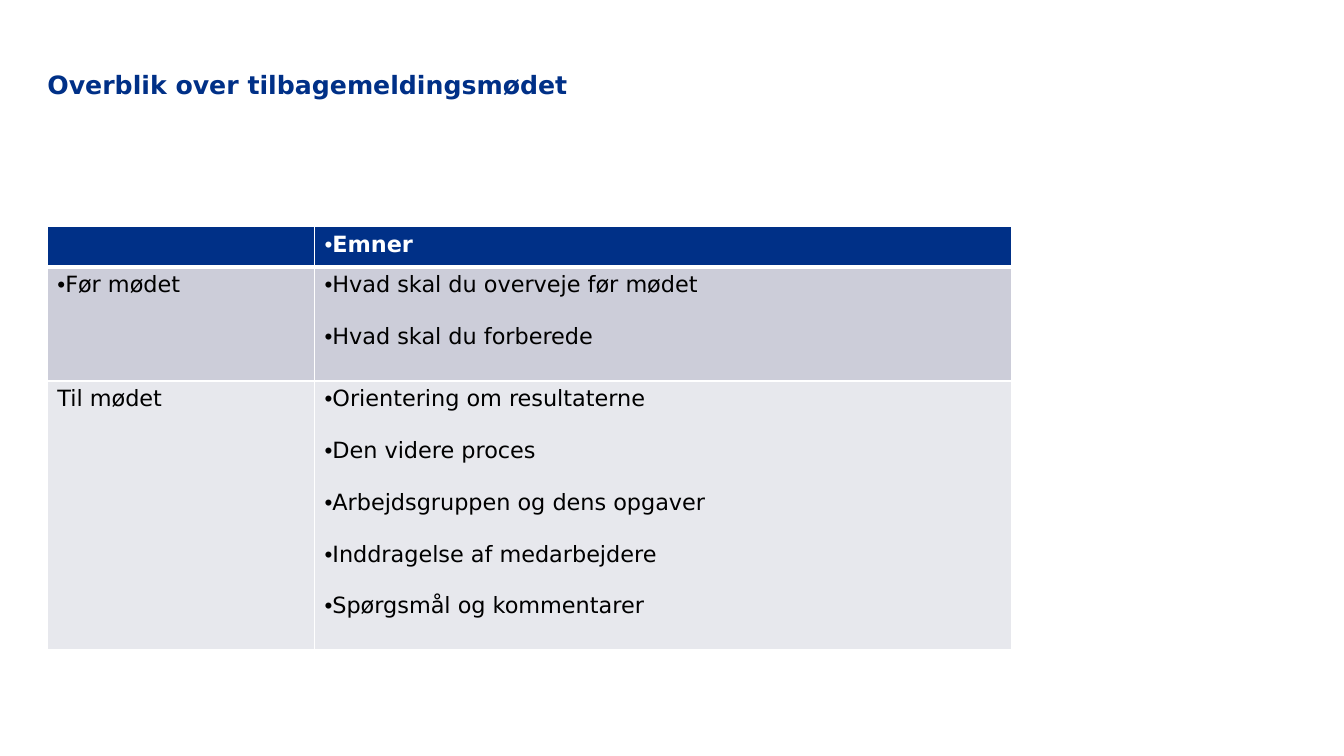
from lxml import etree
from pptx import Presentation
from pptx import util as u
from pptx.dml.color import RGBColor
from pptx.enum import text
from pptx.oxml import ns

NAVY, WHITE, BLACK = "003087", "FFFFFF", "000000"
ROWS = [
    (0.4, NAVY, [], ["Emner"]),
    (1.13, "CCCDD9", ["Før mødet"],
     ["Hvad skal du overveje før mødet", "Hvad skal du forberede"]),
    (2.66, "E7E8ED", ["Til mødet"],
     ["Orientering om resultaterne", "Den videre proces",
      "Arbejdsgruppen og dens opgaver", "Inddragelse af medarbejdere",
      "Spørgsmål og kommentarer"]),
]


def rgb(code):
    return RGBColor.from_string(code)


def add(parent, tag, **attrs):
    return etree.SubElement(parent, ns.qn(tag), attrs)


def write(frame, lines, size=16, color=BLACK, bold=False, bullet=False, gap=0):
    for i, line in enumerate(lines):
        para = frame.paragraphs[0] if i == 0 else frame.add_paragraph()
        if i < len(lines) - 1:
            para.space_after = u.Pt(gap)
        if bullet:
            props = para._p.get_or_add_pPr()
            props.set("marL", "0")
            props.set("indent", "0")
            add(props, "a:buFont", typeface="Arial")
            add(props, "a:buChar", char="•")
        run = para.add_run()
        run.text = line
        font = run.font
        font.name, font.size, font.bold = "DejaVu Sans", u.Pt(size), bold
        font.color.rgb = rgb(color)


class Deck:
    """Holds the presentation, its current slide and the slide's style."""

    def __init__(self):
        self.prs = Presentation()
        self.prs.slide_width = u.Inches(13.33)
        self.prs.slide_height = u.Inches(7.5)
        self.slide = self.prs.slides.add_slide(self.prs.slide_layouts[6])

    def title(self, line, *box):
        frame = self.slide.shapes.add_textbox(*map(u.Inches, box)).text_frame
        frame.word_wrap = True
        frame.margin_left = frame.margin_right = 0
        frame.margin_top = frame.margin_bottom = 0
        frame.vertical_anchor = text.MSO_ANCHOR.TOP
        write(frame, [line], size=18, color=NAVY, bold=True)
        frame.paragraphs[0].line_spacing = 1.04

    def edge(self, cell, side, width):
        line = add(cell._tc.get_or_add_tcPr(), f"a:ln{side}", w=str(u.Pt(width)))
        add(add(line, "a:solidFill"), "a:srgbClr", val=WHITE)

    def cell(self, cell, lines, fill, head, bullet):
        for side in "LRTB":
            thick = head and side == "B"
            self.edge(cell, side, 3 if thick else 1)
        cell.fill.solid()
        cell.fill.fore_color.rgb = rgb(fill)
        write(cell.text_frame, lines, color=WHITE if head else BLACK,
              bold=head, bullet=bullet, gap=18.5)

    def table(self, rows, left, top, widths):
        height = sum(row[0] for row in rows)
        box = map(u.Inches, (left, top, sum(widths), height))
        grid = self.slide.shapes.add_table(len(rows), len(widths), *box).table
        for col, width in zip(grid.columns, widths):
            col.width = u.Inches(width)
        for i, (tall, fill, *cells) in enumerate(rows):
            grid.rows[i].height = u.Inches(tall)
            for j, lines in enumerate(cells):
                bullet = lines != ["Til mødet"]
                self.cell(grid.cell(i, j), lines, fill, i == 0, bullet)

    def save(self):
        self.prs.save("out.pptx")


def main():
    deck = Deck()
    deck.title("Overblik over tilbagemeldingsmødet", 0.47, 0.68, 12.39, 0.39)
    deck.table(ROWS, 0.47, 2.25, (2.65, 6.91))
    deck.save()


if __name__ == "__main__":
    main()
